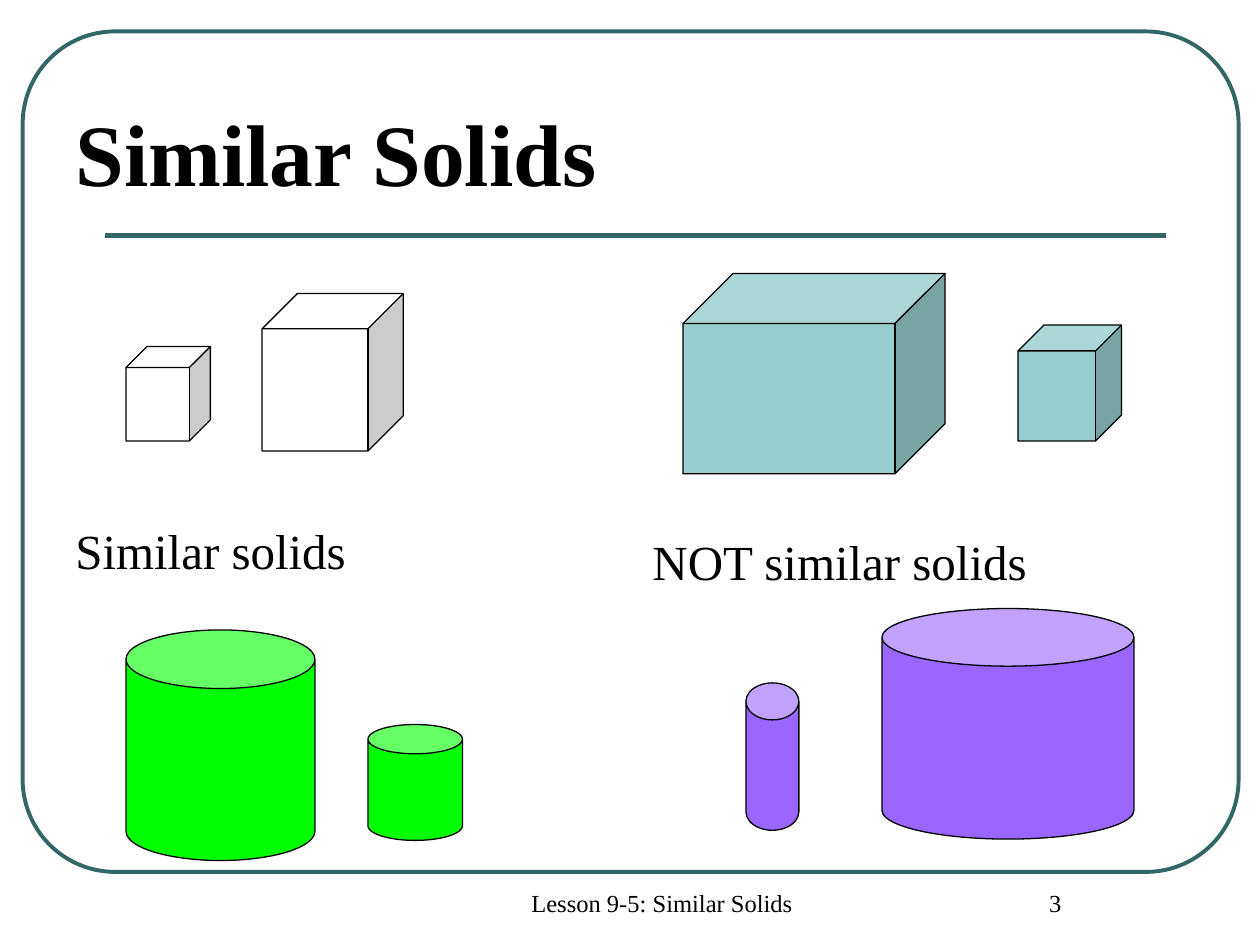
from lxml.etree import SubElement
from pptx import Presentation
from pptx.dml.color import RGBColor
from pptx.enum.shapes import MSO_CONNECTOR, MSO_SHAPE
from pptx.enum.text import MSO_ANCHOR, PP_ALIGN
from pptx.oxml.ns import qn
from pptx.util import Inches, Pt

COLORS = {
    "frame": "336666",
    "ink": "000000",
    "white": "FFFFFF",
    "teal": "97CDCC",
    "green": "00FF00",
    "purple": "9966FF",
}
FONT = "Times New Roman"

# Content: text, (left, top, width, height), size, bold, alignment, anchor, space before
TEXTS = [
    ("Lesson 9-5: Similar Solids", (3.67, 7, 3.17, 0.5), 14, False, PP_ALIGN.CENTER, MSO_ANCHOR.TOP, 0),
    ("3", (7.5, 7, 1.75, 0.5), 14, False, PP_ALIGN.CENTER, MSO_ANCHOR.TOP, 0),
    ("Similar Solids", (0.5, 0.17, 9, 1.5), 50, True, PP_ALIGN.LEFT, MSO_ANCHOR.BOTTOM, 0),
    ("Similar solids", (0.5, 4.08, 2.5, 0.58), 28, False, PP_ALIGN.LEFT, MSO_ANCHOR.TOP, 5.6),
    ("NOT similar solids", (5.08, 4.17, 4.42, 0.58), 28, False, PP_ALIGN.LEFT, MSO_ANCHOR.TOP, 5.6),
]

# Solids: preset, adjustment, color, boxes (left, top, width, height)
SOLIDS = [
    (MSO_SHAPE.CUBE, 0.25, "white", [(1, 2.75, 0.67, 0.75), (2.08, 2.33, 1.12, 1.25)]),
    (MSO_SHAPE.CUBE, 0.25, "teal", [(8.08, 2.58, 0.82, 0.92), (5.42, 2.17, 2.08, 1.59)]),
    (MSO_SHAPE.CAN, 0.31, "green", [(1, 5, 1.5, 1.83), (2.92, 5.75, 0.75, 0.92)]),
    (MSO_SHAPE.CAN, 0.25, "purple", [(7, 4.83, 2, 1.83)]),
    (MSO_SHAPE.CAN, 0.7, "purple", [(5.92, 5.42, 0.42, 1.17)]),
]


def color(name):
    return RGBColor.from_string(COLORS[name])


def inches(values):
    return [Inches(value) for value in values]


def set_line(line, name, width):
    line.color.rgb = color(name)
    line.width = Pt(width)


def add_outline(slide, preset, box, adjustment, line_color, line_width, fill=None):
    shape = slide.shapes.add_shape(preset, *inches(box))
    shape.adjustments[0] = adjustment
    shape.shadow.inherit = False
    if fill:
        shape.fill.solid()
        shape.fill.fore_color.rgb = color(fill)
    else:
        shape.fill.background()
    set_line(shape.line, line_color, line_width)


def add_text(slide, text, box, size, bold, alignment, anchor, space_before):
    frame = slide.shapes.add_textbox(*inches(box)).text_frame
    frame.word_wrap = True
    frame.vertical_anchor = anchor
    paragraph = frame.paragraphs[0]
    paragraph.text = text
    paragraph.alignment = alignment
    paragraph.space_before = Pt(space_before)
    paragraph.font.name = FONT
    paragraph.font.size = Pt(size)
    paragraph.font.bold = bold
    paragraph.font.color.rgb = color("ink")


def main():
    deck = Presentation()
    deck.slide_width, deck.slide_height = Inches(10), Inches(7.5)
    slide = deck.slides.add_slide(deck.slide_layouts[6])

    # Frame and title rule
    add_outline(slide, MSO_SHAPE.ROUNDED_RECTANGLE, (0.18, 0.25, 9.65, 6.67), 0.11, "frame", 2.25)
    title_rule = slide.shapes.add_connector(
        MSO_CONNECTOR.STRAIGHT, *inches((0.83, 1.87, 9.25, 1.87)))
    set_line(title_rule.line, "frame", 3)
    SubElement(title_rule._element.spPr, qn("a:effectLst"))

    # Title, captions and footer
    for entry in TEXTS:
        add_text(slide, *entry)

    # Pairs of solids
    for preset, adjustment, fill, boxes in SOLIDS:
        for box in boxes:
            add_outline(slide, preset, box, adjustment, "ink", 0.75, fill)

    deck.save("out.pptx")


if __name__ == "__main__":
    main()
